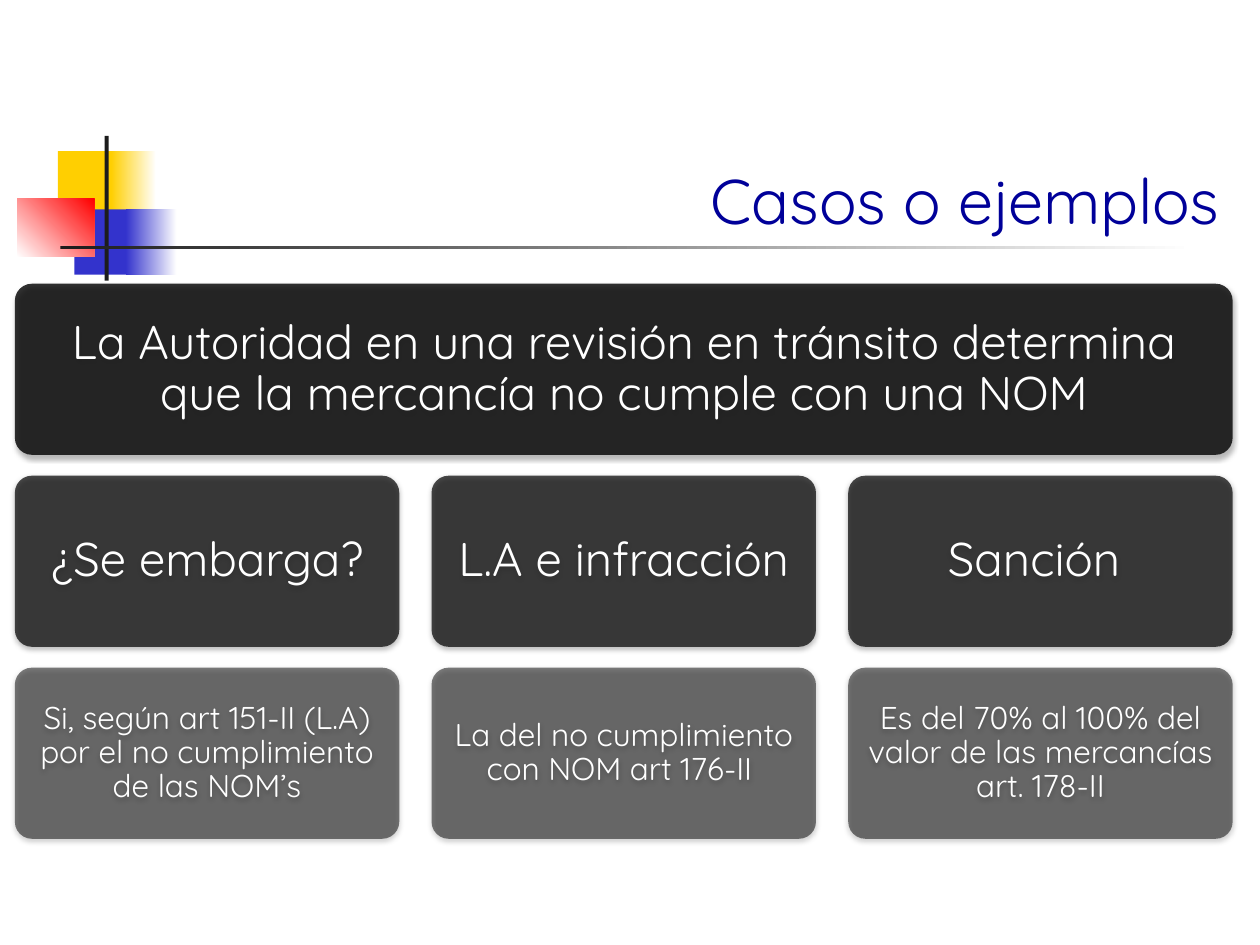
"""Build a slide that sorts one customs case into question, breach and penalty."""
from dataclasses import dataclass

from lxml.etree import SubElement
from pptx import Presentation
from pptx.dml.color import RGBColor
from pptx.enum.shapes import MSO_SHAPE as Kind
from pptx.enum.text import MSO_ANCHOR as Anchor, MSO_AUTO_SIZE as Fit, PP_ALIGN as Align
from pptx.oxml.ns import qn
from pptx.util import Cm, Pt

WHITE = RGBColor(0xFF, 0xFF, 0xFF)
BLACK = RGBColor(0, 0, 0)
INK = RGBColor(0x1C, 0x1C, 0x1C)
GOLD = RGBColor(0xFF, 0xCF, 0x01)
BLUE = RGBColor(0x33, 0x33, 0xCC)
RED = RGBColor(0xFF, 0, 0)
NAVY = RGBColor(0, 0, 0x99)
FONT = "Quicksand"

LEFT, TOP = 0.3, 5.72
WIDE, HIGH = 7.75, 3.45
STEP_X, STEP_Y = 8.4, 3.87


@dataclass(frozen=True)
class Patch:
    left: float
    top: float
    width: float
    height: float
    start: RGBColor
    end: RGBColor | None = None
    angle: int = 0


@dataclass(frozen=True)
class Tier:
    texts: tuple[str, ...]
    alpha: int
    size: int
    inset: float
    shade: int
    drop: float


PATCHES = (
    Patch(1.17, 3.05, 1.22, 1.32, GOLD),
    Patch(2.24, 3.05, 0.91, 1.32, GOLD, WHITE),
    Patch(1.5, 4.22, 1.17, 1.32, BLUE),
    Patch(2.54, 4.22, 1.02, 1.32, BLUE, WHITE),
    Patch(0.35, 4.01, 1.55, 1.17, WHITE, RED, 45),
    Patch(2.11, 2.74, 0.08, 2.92, INK),
    Patch(1.22, 4.95, 22.86, 0.08, INK, WHITE),
)

TIERS = (
    Tier(("La Autoridad en una revisión en tránsito determina que la mercancía "
          "no cumple con una NOM",), 80, 27, 0.28, 35, 1.8),
    Tier(("¿Se embarga?", "L.A e infracción", "Sanción "), 70, 27, 0.28, 38, 1.6),
    Tier(("Si, según art 151-II (L.A) por el no cumplimiento de las NOM’s",
          "La del no cumplimiento con NOM art 176-II ",
          "Es del 70% al 100% del valor de las mercancías art. 178-II"),
         50, 18, 0.18, 38, 1.6),
)


def write(shape, text: str, *, size: int, color: RGBColor, align: Align,
          anchor: Anchor, inset: float | None = None, line: float = 1.0) -> None:
    """Put formatted text into a shape."""
    frame = shape.text_frame
    frame.auto_size = Fit.NONE
    frame.word_wrap = True
    frame.vertical_anchor = anchor
    if inset is not None:
        frame.margin_left = frame.margin_right = Cm(inset)
        frame.margin_top = frame.margin_bottom = Cm(inset)
    para = frame.paragraphs[0]
    para.alignment = align
    para.line_spacing = line
    run = para.add_run()
    run.text = text
    run.font.name = FONT
    run.font.size = Pt(size)
    run.font.color.rgb = color


def block(slide, kind: Kind, left: float, top: float, width: float, height: float):
    """Add a shape without line or shadow."""
    shape = slide.shapes.add_shape(kind, Cm(left), Cm(top), Cm(width), Cm(height))
    shape.shadow.inherit = False
    shape.line.fill.background()
    return shape


def paint(slide, patch: Patch) -> None:
    """Draw one plain or fading patch."""
    fill = block(slide, Kind.RECTANGLE, patch.left, patch.top,
                 patch.width, patch.height).fill
    if patch.end is None:
        fill.solid()
        fill.fore_color.rgb = patch.start
        return
    fill.gradient()
    fill.gradient_angle = patch.angle
    for stop, color in zip(fill.gradient_stops, (patch.start, patch.end)):
        stop.color.rgb = color


def glaze(shape, tier: Tier) -> None:
    """Give a shape a see-through black fill and a soft shadow."""
    shape.fill.solid()
    shape.fill.fore_color.rgb = BLACK
    props = shape._element.spPr
    tint = props.find(qn("a:solidFill"))[0]
    SubElement(tint, qn("a:alpha"), val=str(tier.alpha * 1000))
    cast = SubElement(props.find(qn("a:effectLst")), qn("a:outerShdw"),
                      blurRad=str(Pt(3.1)), dist=str(Pt(tier.drop)),
                      dir="5400000", rotWithShape="0")
    tone = SubElement(cast, qn("a:srgbClr"), val=str(BLACK))
    SubElement(tone, qn("a:alpha"), val=str(tier.shade * 1000))


def stack(slide, tier: Tier, row: int) -> None:
    """Draw one row of cards, a lone card spanning all columns."""
    width = WIDE + 2 * STEP_X if len(tier.texts) == 1 else WIDE
    for col, text in enumerate(tier.texts):
        card = block(slide, Kind.ROUNDED_RECTANGLE, LEFT + col * STEP_X,
                     TOP + row * STEP_Y, width, HIGH)
        card.adjustments[0] = 0.1
        glaze(card, tier)
        write(card, text, size=tier.size, color=WHITE, align=Align.CENTER,
              anchor=Anchor.MIDDLE, inset=tier.inset, line=0.9)


def main() -> None:
    """Build and save the slide."""
    deck = Presentation()
    deck.slide_width, deck.slide_height = Cm(25.4), Cm(19.05)
    slide = deck.slides.add_slide(deck.slide_layouts[5])
    for patch in PATCHES:
        paint(slide, patch)
    title = slide.shapes.title
    title.left, title.top = Cm(3.2), Cm(1.73)
    title.width, title.height = Cm(21.64), Cm(3.18)
    write(title, "Casos o ejemplos", size=36, color=NAVY, align=Align.RIGHT,
          anchor=Anchor.BOTTOM)
    for row, tier in enumerate(TIERS):
        stack(slide, tier, row)
    deck.save("out.pptx")


if __name__ == "__main__":
    main()
